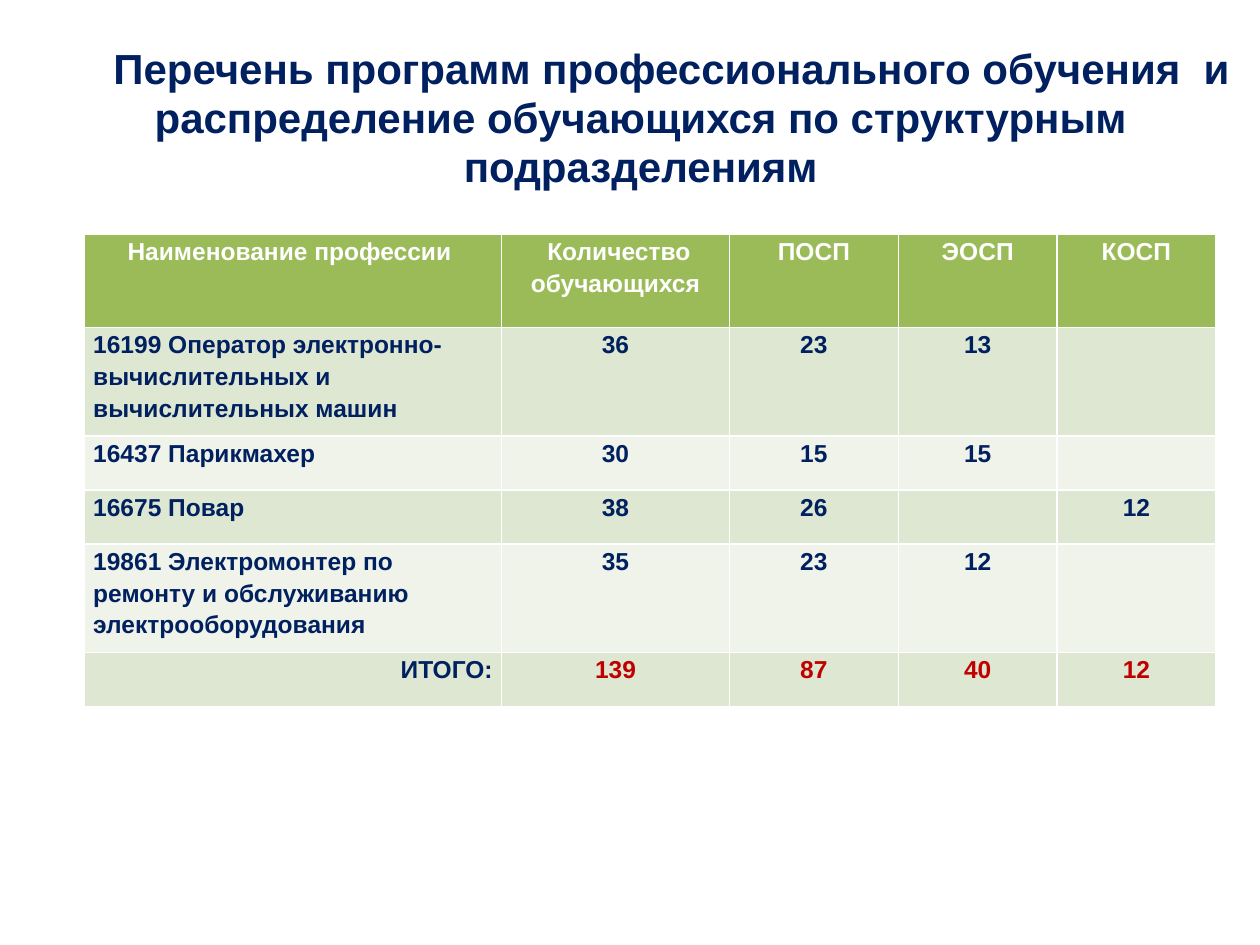
import pptx
import pptx.util
import pptx.dml.color
import pptx.enum.text
import pptx.oxml
import pptx.oxml.ns

Inches, Pt = pptx.util.Inches, pptx.util.Pt
ALIGN = pptx.enum.text.PP_ALIGN

# Content
TITLE = ("Перечень программ профессионального обучения  и распределение "
         "обучающихся по структурным подразделениям")
ROWS = [
    ("Наименование профессии ", " Количество обучающихся", "ПОСП", "ЭОСП", "КОСП"),
    ("16199 Оператор электронно-вычислительных и вычислительных машин",
     "36", "23", "13", ""),
    ("16437 Парикмахер", "30", "15", "15", ""),
    ("16675 Повар", "38", "26", "", "12"),
    ("19861 Электромонтер по ремонту и обслуживанию электрооборудования",
     "35", "23", "12", ""),
    ("ИТОГО:", "139", "87", "40", "12"),
]
COL_WIDTHS = (3.31, 1.81, 1.34, 1.26, 1.26)
ROW_HEIGHTS = (0.74, 0.86, 0.43, 0.43, 0.86, 0.43)
COLORS = {"navy": "002060", "red": "C00000", "white": "FFFFFF",
          "header": "9BBB59", "band_dark": "DEE7D1", "band_light": "EFF3EA"}


def rgb(name):
    return pptx.dml.color.RGBColor.from_string(COLORS[name])


def format_paragraph(p, size, color, align, spacing):
    p.alignment = align
    p.line_spacing = spacing
    p.font.name = "Arial"
    p.font.size = Pt(size)
    p.font.bold = True
    p.font.color.rgb = rgb(color)


def add_tab_stop(p, position):
    tabs = pptx.oxml.parse_xml(
        f'<a:tabLst {pptx.oxml.ns.nsdecls("a")}>'
        f'<a:tab pos="{Inches(position)}" algn="l"/></a:tabLst>')
    p._p.get_or_add_pPr().append(tabs)


def cell_style(row, col):
    """Return fill, text colour and alignment for a table position."""
    last = len(ROWS) - 1
    if row == 0:
        return "header", "white", ALIGN.CENTER
    fill = "band_dark" if row % 2 else "band_light"
    color = "red" if row == last and col else "navy"
    if col:
        return fill, color, ALIGN.CENTER
    return fill, color, ALIGN.RIGHT if row == last else ALIGN.LEFT


prs = pptx.Presentation()
prs.slide_width, prs.slide_height = Inches(10), Inches(7.5)
s = prs.slides.add_slide(prs.slide_layouts[5])

# Title
title = s.shapes.title
title.left, title.top = Inches(0.17), Inches(0.33)
title.width, title.height = Inches(9.83), Inches(1.23)
tf = title.text_frame
tf.text = TITLE
tf.word_wrap = True
tf.auto_size = pptx.enum.text.MSO_AUTO_SIZE.NONE
tf.vertical_anchor = pptx.enum.text.MSO_ANCHOR.MIDDLE
p = tf.paragraphs[0]
p._p.get_or_add_pPr().set("indent", str(Inches(0.49)))
format_paragraph(p, 24, "navy", ALIGN.CENTER, 0.97)

# Table: white rules come from the default table style
table = s.shapes.add_table(
    len(ROWS), len(COL_WIDTHS), Inches(0.67), Inches(1.86),
    Inches(sum(COL_WIDTHS)), Inches(sum(ROW_HEIGHTS))).table
for column, width in zip(table.columns, COL_WIDTHS):
    column.width = Inches(width)
for row, height in zip(table.rows, ROW_HEIGHTS):
    row.height = Inches(height)

for i, values in enumerate(ROWS):
    for j, value in enumerate(values):
        fill, color, align = cell_style(i, j)
        cell = table.cell(i, j)
        cell.fill.solid()
        cell.fill.fore_color.rgb = rgb(fill)
        cell.margin_left = cell.margin_right = Inches(0.07)
        cell.margin_top = cell.margin_bottom = 0
        cell.text = value
        p = cell.text_frame.paragraphs[0]
        add_tab_stop(p, 0.65)
        format_paragraph(p, 14, color, align, 1.15)

prs.save("out.pptx")
